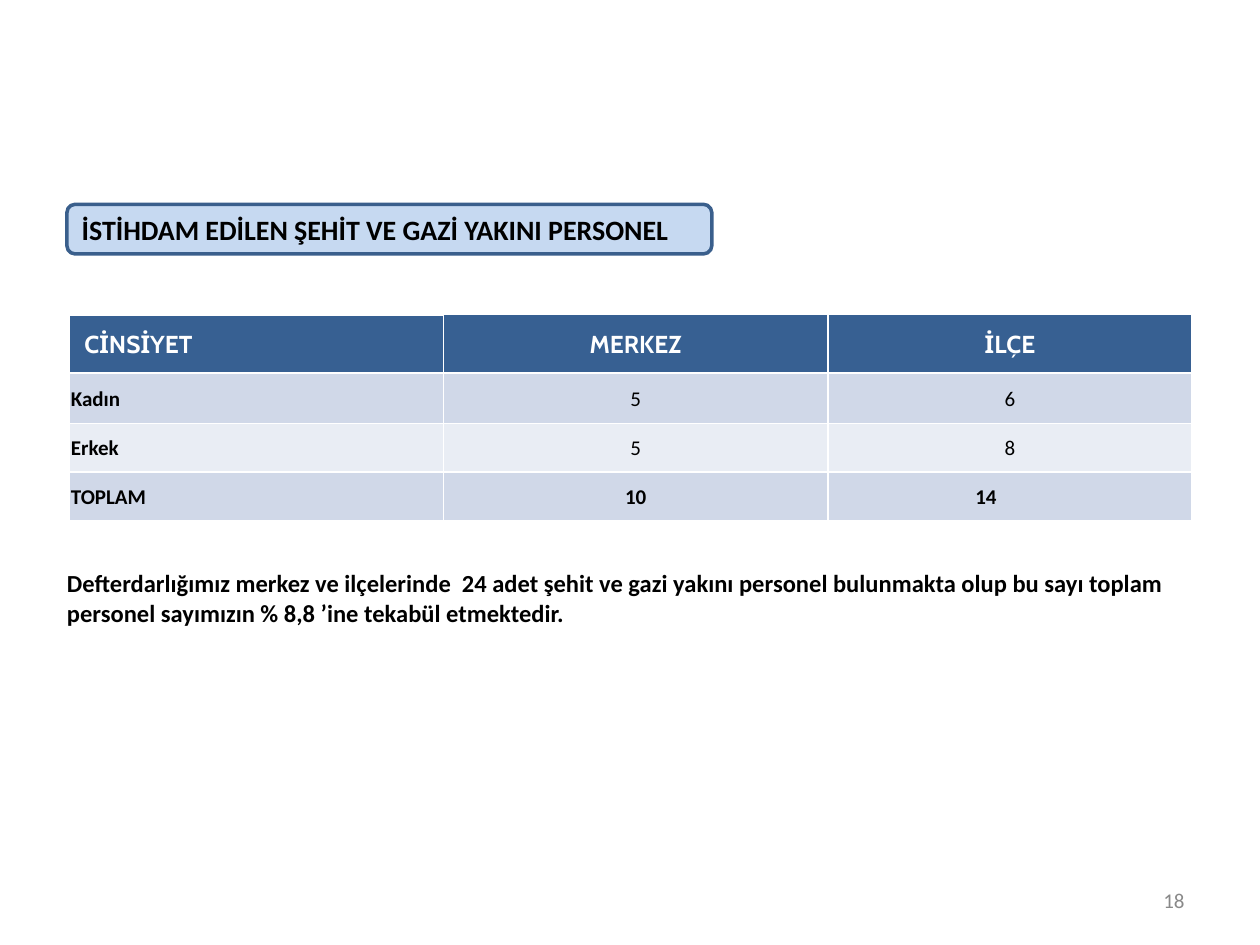
from pptx import Presentation
from pptx.dml.color import RGBColor
from pptx.enum.shapes import MSO_SHAPE
from pptx.enum.text import MSO_ANCHOR, PP_ALIGN
from pptx.oxml import parse_xml
from pptx.oxml.ns import nsdecls
from pptx.util import Cm, Pt

COLORS = {
    "black": "000000",
    "white": "FFFFFF",
    "badge": "C6D9F1",
    "badge_line": "3A5F8C",
    "header": "376092",
    "band_dark": "D0D8E8",
    "band_light": "E9EDF4",
    "number": "898989",
}
COLUMN_WIDTHS = [7.54, 7.75, 7.34]
ROW_HEIGHTS = [1.19, 1.02, 0.97, 0.99]
ROWS = [
    ["CİNSİYET", "MERKEZ", "İLÇE"],
    ["Kadın", "5", "6"],
    ["Erkek", "5", "8"],
    ["TOPLAM", "10", "14"],
]
CELL_MARGIN = 0.03


def color(name):
    return RGBColor.from_string(COLORS[name])


def write(text_frame, text, size, color_name="black", bold=True,
          font="Calibri", align=PP_ALIGN.LEFT):
    paragraph = text_frame.paragraphs[0]
    paragraph.alignment = align
    run = paragraph.add_run()
    run.text = text
    run.font.name = font
    run.font.size = Pt(size)
    run.font.bold = bold
    run.font.color.rgb = color(color_name)


def add_text(slide, left, top, width, height, text, size,
             anchor=MSO_ANCHOR.TOP, **style):
    box = slide.shapes.add_textbox(Cm(left), Cm(top), Cm(width), Cm(height))
    box.text_frame.word_wrap = True
    box.text_frame.vertical_anchor = anchor
    write(box.text_frame, text, size, **style)


def add_badge(slide, left, top, width, height, text):
    """Add the rounded heading bar."""
    badge = slide.shapes.add_shape(
        MSO_SHAPE.ROUNDED_RECTANGLE, Cm(left), Cm(top), Cm(width), Cm(height))
    badge.shadow.inherit = False
    badge.fill.solid()
    badge.fill.fore_color.rgb = color("badge")
    badge.line.color.rgb = color("badge_line")
    badge.line.width = Pt(2)
    badge.text_frame.word_wrap = True
    badge.text_frame.vertical_anchor = MSO_ANCHOR.MIDDLE
    write(badge.text_frame, text, 16)


def set_borders(cell, top_width):
    properties = cell._tc.get_or_add_tcPr()
    widths = {"lnL": 1, "lnR": 1, "lnT": top_width, "lnB": 1}
    for position, (tag, width) in enumerate(widths.items()):
        properties.insert(position, parse_xml(
            f'<a:{tag} {nsdecls("a")} w="{Pt(width)}"><a:solidFill>'
            f'<a:srgbClr val="{COLORS["white"]}"/></a:solidFill></a:{tag}>'))


def fill_cell(cell, text, row, column):
    is_header = row == 0
    is_label = column == 0
    cell.margin_left = cell.margin_right = cell.margin_top = Cm(CELL_MARGIN)
    cell.margin_bottom = 0
    cell.vertical_anchor = MSO_ANCHOR.MIDDLE
    cell.fill.solid()
    band = "band_dark" if row % 2 else "band_light"
    cell.fill.fore_color.rgb = color("header" if is_header else band)
    set_borders(cell, 3 if is_header and is_label else 1)
    write(cell.text_frame, text,
          size=14 if is_header else 12,
          color_name="white" if is_header else "black",
          bold=is_header or is_label or row == len(ROWS) - 1,
          font="Cabin" if is_header else "Calibri",
          align=PP_ALIGN.LEFT if is_label else PP_ALIGN.CENTER)


def add_personnel_table(slide, left, top):
    table = slide.shapes.add_table(
        len(ROWS), len(COLUMN_WIDTHS), Cm(left), Cm(top),
        Cm(sum(COLUMN_WIDTHS)), Cm(sum(ROW_HEIGHTS))).table
    for column, width in zip(table.columns, COLUMN_WIDTHS):
        column.width = Cm(width)
    for row, height in zip(table.rows, ROW_HEIGHTS):
        row.height = Cm(height)
    for row, texts in enumerate(ROWS):
        for column, text in enumerate(texts):
            fill_cell(table.cell(row, column), text, row, column)
    table.cell(0, 0).margin_left = Cm(0.3)
    table.cell(3, 2).margin_right = Cm(1)


def main():
    presentation = Presentation()
    presentation.slide_width = Cm(25.4)
    presentation.slide_height = Cm(19.05)
    slide = presentation.slides.add_slide(presentation.slide_layouts[6])
    add_badge(slide, 1.35, 4.12, 13, 1,
              "İSTİHDAM EDİLEN ŞEHİT VE GAZİ YAKINI PERSONEL")
    add_personnel_table(slide, 1.4, 6.33)
    add_text(slide, 1.1, 11.33, 22.7, 1.45,
             "Defterdarlığımız merkez ve ilçelerinde  24 adet şehit ve gazi "
             "yakını personel bulunmakta olup bu sayı toplam personel "
             "sayımızın % 8,8 ’ine tekabül etmektedir.", 14)
    add_text(slide, 18.2, 17.65, 5.93, 1.01, "18", 12, MSO_ANCHOR.MIDDLE,
             color_name="number", bold=False, align=PP_ALIGN.RIGHT)
    presentation.save("out.pptx")


if __name__ == "__main__":
    main()
